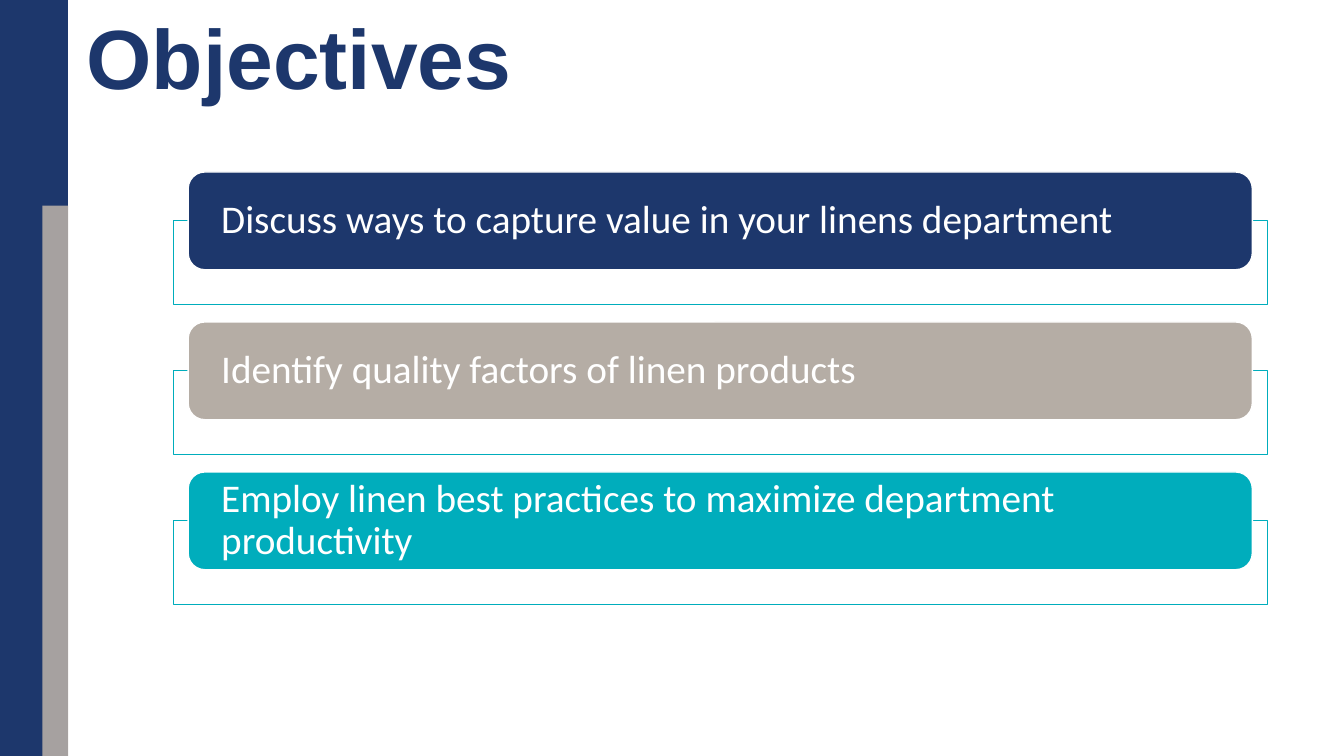
import pptx
import pptx.util
import pptx.dml.color
import pptx.enum.shapes
import pptx.enum.text
import pptx.oxml.ns
import lxml.etree

Pt = pptx.util.Pt
SHAPE = pptx.enum.shapes.MSO_SHAPE
NAVY, TAUPE, TEAL, WHITE = "1D376C", "B5ADA5", "00ADBC", "FFFFFF"

prs = pptx.Presentation()
prs.slide_width = pptx.util.Inches(13.33)
prs.slide_height = pptx.util.Inches(7.5)
s = prs.slides.add_slide(prs.slide_layouts[6])

# Grid of 100 columns by 100 rows
COL, ROW = prs.slide_width / 100, prs.slide_height / 100


def paint(color_format, hex_color, opacity=100):
    color_format.rgb = pptx.dml.color.RGBColor.from_string(hex_color)
    if opacity < 100:
        srgb = color_format._xFill.find(pptx.oxml.ns.qn("a:srgbClr"))
        alpha = lxml.etree.SubElement(srgb, pptx.oxml.ns.qn("a:alpha"))
        alpha.set("val", str(opacity * 1000))


def add_box(kind, left, top, width, height, fill, opacity=100, line=None):
    sp = s.shapes.add_shape(kind, int(left * COL), int(top * ROW),
                            int(width * COL), int(height * ROW))
    sp.shadow.inherit = False
    sp.fill.solid()
    paint(sp.fill.fore_color, fill, opacity)
    if line:
        paint(sp.line.color, line)
        sp.line.width = Pt(1)
    else:
        sp.line.fill.background()
    return sp


# Side bars
add_box(SHAPE.RECTANGLE, 0, 0, 5.05, 100, NAVY)
add_box(SHAPE.RECTANGLE, 3.15, 27.2, 1.92, 72.8, "B5ADA6", 90)

# Title
tb = s.shapes.add_textbox(int(5.7 * COL), int(1.4 * ROW),
                          int(88.6 * COL), int(13.47 * ROW))
tf = tb.text_frame
tf.word_wrap = True
p = tf.paragraphs[0]
p.text = "Objectives"
p.line_spacing = Pt(65)
r = p.runs[0]
r.font.size, r.font.name, r.font.bold = Pt(60), "Arial", True
paint(r.font.color, NAVY)

# Objectives: a coloured card over an outlined frame, at equal steps
objectives = [
    ("Discuss ways to capture value in your linens department", NAVY),
    ("Identify quality factors of linen products", TAUPE),
    ("Employ linen best practices to maximize department productivity", TEAL),
]
STEP = 19.84
for i, (text, color) in enumerate(objectives):
    add_box(SHAPE.RECTANGLE, 12.9, 29.2 + i * STEP, 81.4, 11.07, WHITE, 90, TEAL)
    sp = add_box(SHAPE.ROUNDED_RECTANGLE, 14, 22.75 + i * STEP, 79.18, 12.93,
                 color, line=WHITE)
    sp.adjustments[0] = 0.17
    tf = sp.text_frame
    tf.word_wrap = True
    tf.vertical_anchor = pptx.enum.text.MSO_ANCHOR.MIDDLE
    tf.margin_left = tf.margin_right = int(2.1 * COL)
    tf.margin_top = tf.margin_bottom = 0
    p = tf.paragraphs[0]
    p.text = text
    p.alignment = pptx.enum.text.PP_ALIGN.LEFT
    p.line_spacing = 0.9
    r = p.runs[0]
    r.font.size, r.font.name = Pt(28), "Calibri"
    paint(r.font.color, WHITE)

prs.save("out.pptx")
